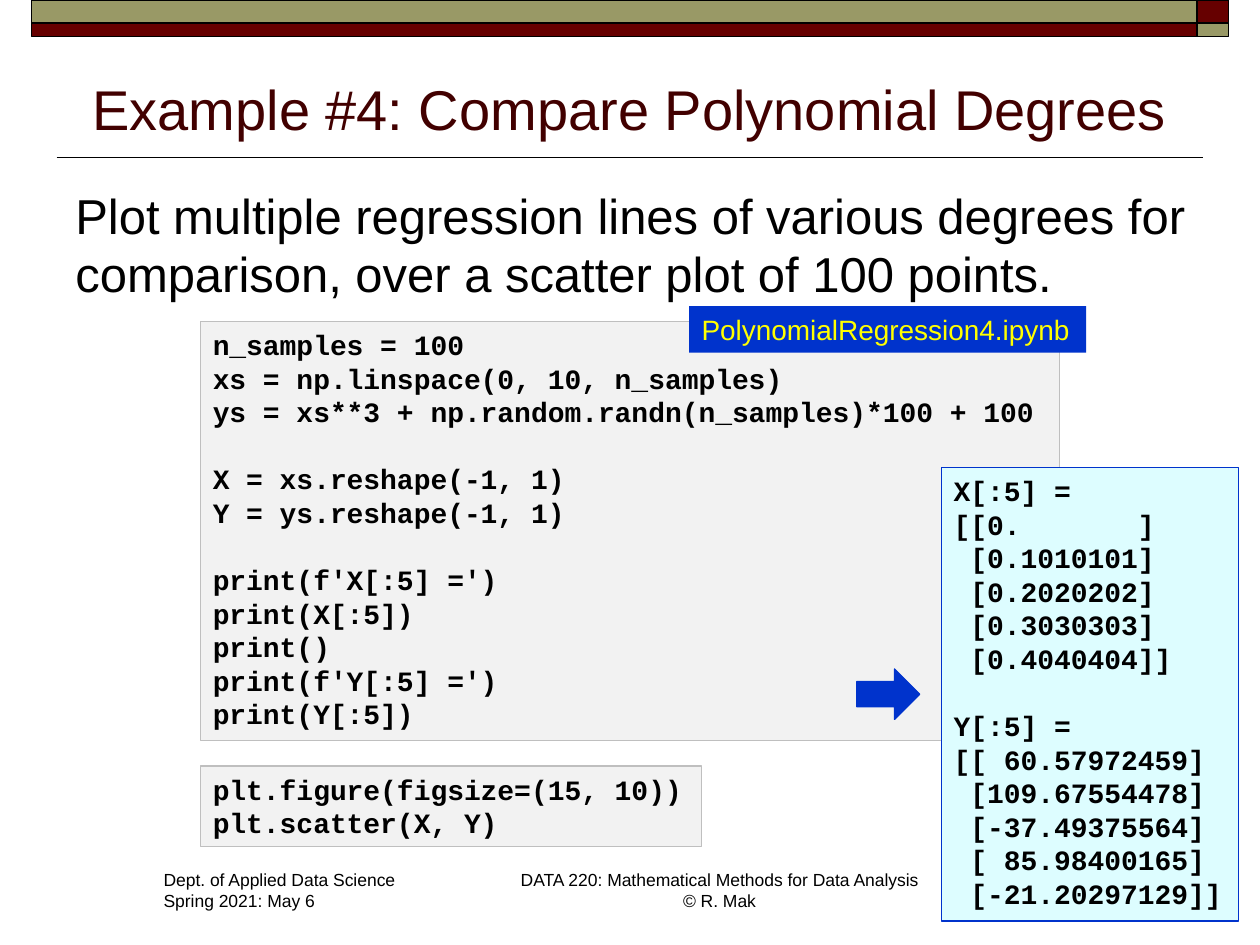
import collections

import lxml.etree
import pptx
import pptx.dml.color
import pptx.enum.shapes
import pptx.enum.text
import pptx.oxml.ns
import pptx.util

COLORS = {
    "maroon": "660000", "olive": "999966", "title": "420000", "black": "000000",
    "code": "F2F2F2", "code_edge": "BFBFBF", "output": "DDFDFF",
    "blue": "0033CC", "yellow": "FFFF00",
}
COLUMNS, ROWS = 100, 75
LINE_HEIGHT = 1.2

SETUP_CODE = """n_samples = 100
xs = np.linspace(0, 10, n_samples)
ys = xs**3 + np.random.randn(n_samples)*100 + 100

X = xs.reshape(-1, 1)
Y = ys.reshape(-1, 1)

print(f'X[:5] =')
print(X[:5])
print()
print(f'Y[:5] =')
print(Y[:5])"""
PLOT_CODE = """plt.figure(figsize=(15, 10))
plt.scatter(X, Y)"""
OUTPUT = """X[:5] =
[[0.       ]
 [0.1010101]
 [0.2020202]
 [0.3030303]
 [0.4040404]]

Y[:5] =
[[ 60.57972459]
 [109.67554478]
 [-37.49375564]
 [ 85.98400165]
 [-21.20297129]]"""

Box = collections.namedtuple("Box", "left top width height")
SHAPES = pptx.enum.shapes.MSO_SHAPE
ALIGN = pptx.enum.text.PP_ALIGN
ANCHOR = pptx.enum.text.MSO_ANCHOR

presentation = pptx.Presentation()
presentation.slide_width = pptx.util.Inches(10)
presentation.slide_height = pptx.util.Inches(7.5)
COLUMN = presentation.slide_width / COLUMNS
ROW = presentation.slide_height / ROWS


def rgb(name):
    return pptx.dml.color.RGBColor.from_string(COLORS[name])


def to_emu(box):
    """Turn columns and rows into slide lengths."""
    return [round(length * unit) for length, unit in zip(box, (COLUMN, ROW, COLUMN, ROW))]


def add_block(slide, box, fill, line=None, line_width=0.75, kind=SHAPES.RECTANGLE):
    shape = slide.shapes.add_shape(kind, *to_emu(box))
    shape.shadow.inherit = False
    shape.fill.solid()
    shape.fill.fore_color.rgb = rgb(fill)
    if line:
        shape.line.color.rgb = rgb(line)
        shape.line.width = pptx.util.Pt(line_width)
    else:
        shape.line.fill.background()
    return shape


def write(shape, text, size, color="black", font="Arial", bold=False,
          align=ALIGN.LEFT, anchor=ANCHOR.TOP, wrap=True):
    frame = shape.text_frame
    frame.word_wrap = wrap
    frame.vertical_anchor = anchor
    frame.text = text
    for paragraph in frame.paragraphs:
        paragraph.alignment = align
        paragraph.line_spacing = pptx.util.Pt(size * LINE_HEIGHT)
        paragraph.font.name = font
        paragraph.font.size = pptx.util.Pt(size)
        paragraph.font.bold = bold
        paragraph.font.color.rgb = rgb(color)


def add_text(slide, box, text, size, **style):
    shape = slide.shapes.add_textbox(*to_emu(box))
    write(shape, text, size, **style)
    return shape


def add_banner(slide, box):
    """Two stripes whose colours swap in the narrow end column."""
    end, upper = 2.5, 1.8
    wide, lower = box.width - end, box.height - upper
    for top, height, colors in ((box.top, upper, ("olive", "maroon")),
                                (box.top + upper, lower, ("maroon", "olive"))):
        add_block(slide, Box(box.left, top, wide, height), colors[0], "black", 1)
        add_block(slide, Box(box.left + wide, top, end, height), colors[1], "black", 1)


def add_title(slide, box, text):
    """Title with a rule just below it."""
    add_text(slide, box, text, 32, color="title", align=ALIGN.CENTER, anchor=ANCHOR.BOTTOM)
    overhang, gap = 0.5, 0.8
    left, top, width, _ = to_emu(Box(box.left - overhang, box.top + box.height + gap,
                                     box.width + 2 * overhang, 0))
    rule = slide.shapes.add_connector(pptx.enum.shapes.MSO_CONNECTOR.STRAIGHT,
                                      left, top, left + width, top)
    rule.line.color.rgb = rgb("black")
    rule.line.width = pptx.util.Pt(1)
    lxml.etree.SubElement(rule._element.spPr, pptx.oxml.ns.qn("a:effectLst"))


def add_bullet(slide, box, text):
    shape = slide.shapes.add_textbox(*to_emu(box))
    properties = shape.text_frame.paragraphs[0]._p.get_or_add_pPr()
    indent = pptx.util.Inches(0.51)
    properties.set("marL", str(indent))
    properties.set("indent", str(-indent))
    qn = pptx.oxml.ns.qn
    color = lxml.etree.SubElement(properties, qn("a:buClr"))
    lxml.etree.SubElement(color, qn("a:srgbClr"), val=COLORS["maroon"])
    lxml.etree.SubElement(properties, qn("a:buSzPct"), val="70000")
    lxml.etree.SubElement(properties, qn("a:buFont"), typeface="Arial")
    lxml.etree.SubElement(properties, qn("a:buChar"), char="□")
    write(shape, text, 28)


def add_code(slide, box, text, fill="code", line="code_edge"):
    write(add_block(slide, box, fill, line), text, 16, font="Courier New", bold=True)


def add_example(slide, box):
    """Two code panels, with the printed output and file name over them."""
    left, top = box.left, box.top
    add_code(slide, Box(left, top, 68.2, 33.3), SETUP_CODE)
    add_code(slide, Box(left + 58.8, top + 11.6, 23.6, 36), OUTPUT, "output", "blue")
    add_block(slide, Box(left + 52.1, top + 27.6, 5, 4), "blue", "blue",
              kind=SHAPES.RIGHT_ARROW)
    add_code(slide, Box(left, top + box.height - 6.4, 39.8, 6.4), PLOT_CODE)
    label = add_block(slide, Box(left + 38.8, top - 1.2, 31.5, 3.7), "blue")
    write(label, "PolynomialRegression4.ipynb", 16, color="yellow")


def add_footer(slide, box):
    add_text(slide, Box(box.left, box.top, 20.6, box.height),
             "Dept. of Applied Data Science\nSpring 2021: May 6", 10, wrap=False)
    add_text(slide, Box(box.left + 28, box.top, 34.2, box.height),
             "DATA 220: Mathematical Methods for Data Analysis\n© R. Mak", 10,
             align=ALIGN.CENTER, wrap=False)


def main():
    slide = presentation.slides.add_slide(presentation.slide_layouts[6])
    add_banner(slide, Box(2.5, 0, 95, 2.9))
    add_footer(slide, Box(12, 68.5, 62.2, 4.4))
    add_title(slide, Box(5, 4.5, 90, 7.2), "Example #4: Compare Polynomial Degrees")
    add_bullet(slide, Box(5, 14.2, 91, 10.3),
               "Plot multiple regression lines of various degrees for comparison, "
               "over a scatter plot of 100 points.")
    add_example(slide, Box(15.9, 25.5, 82.4, 41.7))
    presentation.save("out.pptx")


if __name__ == "__main__":
    main()
